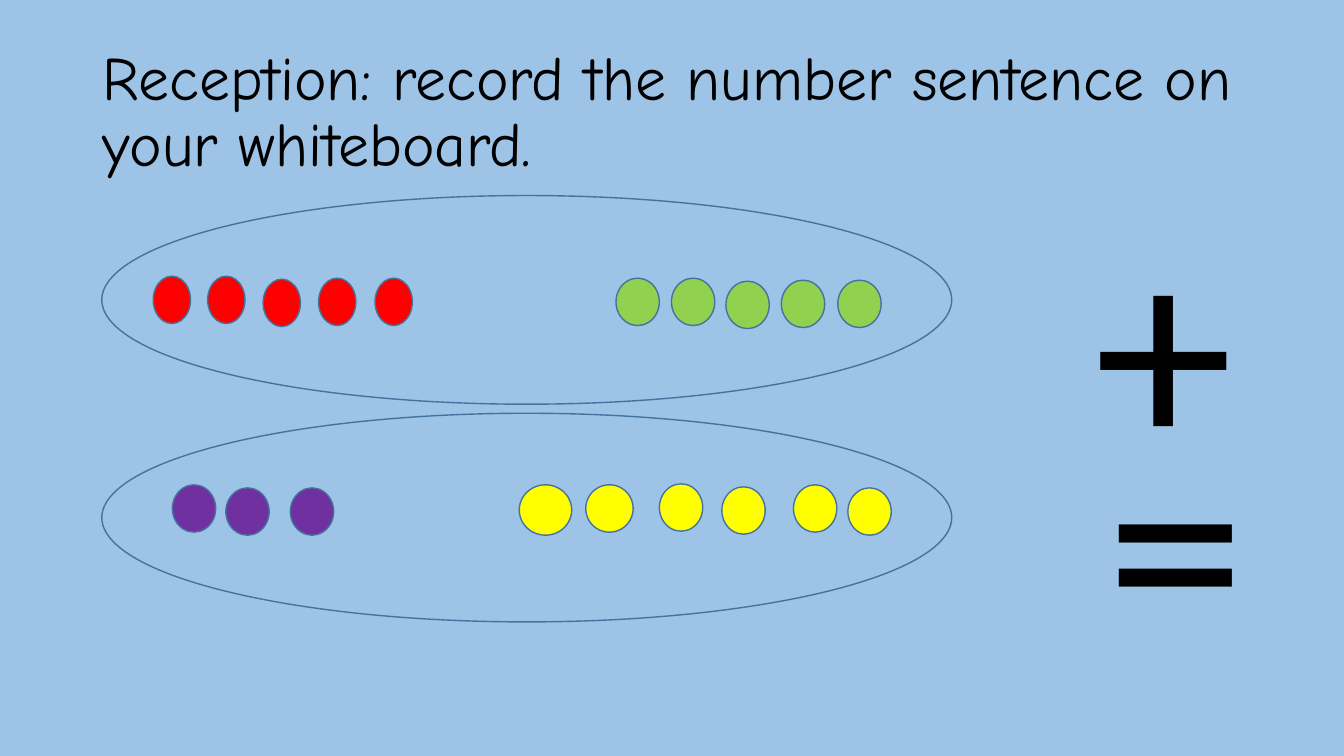
import pptx
import pptx.dml.color
import pptx.enum.shapes
import pptx.enum.text
import pptx.util

PX = 9144  # EMU per px, 100 px to the inch


def colour(hex_code):
    return pptx.dml.color.RGBColor.from_string(hex_code)


class Board:
    """Holds the style and the current slide."""
    background = "9DC3E6"
    outline = "43739E"
    ink = "000000"
    title_font = "Comic Neue"
    sign_font = "Calibri"

    def __init__(self, slide):
        self.slide = slide
        fill = slide.background.fill
        fill.solid()
        fill.fore_color.rgb = colour(self.background)

    def add_text(self, frame, text, font, size, spacing):
        frame.word_wrap = True
        frame.auto_size = pptx.enum.text.MSO_AUTO_SIZE.NONE
        paragraph = frame.paragraphs[0]
        paragraph.alignment = pptx.enum.text.PP_ALIGN.LEFT
        paragraph.line_spacing = spacing
        run = paragraph.add_run()
        run.text = text
        run.font.name = font
        run.font.size = pptx.util.Pt(size)
        run.font.color.rgb = colour(self.ink)
        return paragraph

    def title(self, text, left, top, width, height):
        heading = self.slide.shapes.title
        heading.left, heading.top = left * PX, top * PX
        heading.width, heading.height = width * PX, height * PX
        heading.text_frame.vertical_anchor = pptx.enum.text.MSO_ANCHOR.MIDDLE
        self.add_text(heading.text_frame, text, self.title_font, 44, 0.9)

    def oval(self, left, top, width, height, fill=None):
        oval = self.slide.shapes.add_shape(
            pptx.enum.shapes.MSO_SHAPE.OVAL,
            left * PX, top * PX, width * PX, height * PX)
        oval.shadow.inherit = False
        if fill:
            oval.fill.solid()
            oval.fill.fore_color.rgb = colour(fill)
        else:
            oval.fill.background()
        oval.line.color.rgb = colour(self.outline)
        oval.line.width = pptx.util.Pt(1)

    def counters(self, fill, places, width=43, height=47):
        for left, top in places:
            self.oval(left, top, width, height, fill)

    def sign(self, text, left, top):
        box = self.slide.shapes.add_textbox(
            left * PX, top * PX, 187 * PX, 299 * PX)
        paragraph = self.add_text(
            box.text_frame, text, self.sign_font, 199, 0.8)
        paragraph.space_before = pptx.util.Pt(10)


def main():
    deck = pptx.Presentation()
    deck.slide_width, deck.slide_height = 1333 * PX, 750 * PX
    board = Board(deck.slides.add_slide(deck.slide_layouts[5]))

    board.title("Reception: record the number sentence on your whiteboard.",
                92, 40, 1150, 145)

    # Counters of the first group
    board.counters("FF0000", [(152, 274), (206, 274), (261, 277),
                              (372, 276), (316, 276)], width=37)
    board.counters("92D050", [(611, 276), (666, 276), (720, 279),
                              (831, 278), (775, 278)])

    # Counters of the second group; the first two yellow ones are larger
    board.counters("7030A0", [(171, 481), (224, 484), (288, 484)])
    board.counters("FFFF00", [(515, 481)], width=52, height=50)
    board.counters("FFFF00", [(581, 481)], width=47)
    board.counters("FFFF00", [(654, 480), (716, 483), (787, 481), (841, 484)])

    # Rings around the two groups
    for ring_top in (194, 410):
        board.oval(101, ring_top, 843, 207)

    # Signs of the number sentence
    board.sign("+", 1076, 229)
    board.sign("=", 1088, 422)

    deck.save("out.pptx")


if __name__ == "__main__":
    main()
